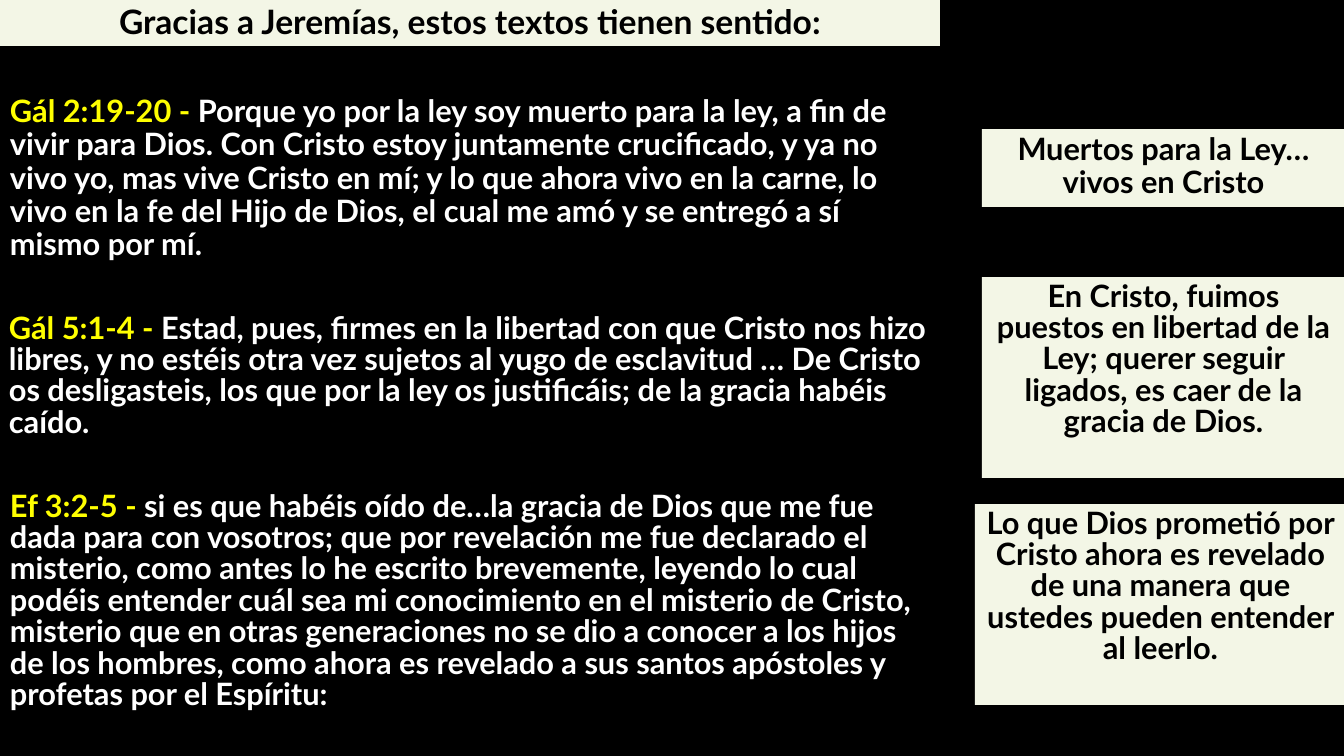
from dataclasses import dataclass

from pptx import Presentation
from pptx.dml.color import RGBColor
from pptx.enum.shapes import MSO_SHAPE
from pptx.enum.text import MSO_ANCHOR, PP_ALIGN
from pptx.util import Emu, Pt


@dataclass(frozen=True)
class Theme:
    font: str = "Lato"
    background: str = "000000"
    panel: str = "F3F6E6"
    dark: str = "000000"
    light: str = "FFFFFF"
    accent: str = "FFFF00"
    title: int = 24
    body: int = 22


class Deck:
    """Draws verses and panels on the current slide in one theme."""

    scale = 914400 / 100.8

    def __init__(self, prs, theme):
        self.theme = theme
        prs.slide_width, prs.slide_height = self.emu(1344, 756)
        self.s = prs.slides.add_slide(prs.slide_layouts[6])
        self.fill(self.s.background, theme.background)

    def emu(self, *lengths):
        return [Emu(round(n * self.scale)) for n in lengths]

    def fill(self, target, color):
        target.fill.solid()
        target.fill.fore_color.rgb = RGBColor.from_string(color)

    def set_text(self, sp, runs, size, spacing, align):
        tf = sp.text_frame
        tf.word_wrap = True
        tf.vertical_anchor = MSO_ANCHOR.TOP
        p = tf.paragraphs[0]
        p.alignment = align
        p.line_spacing = spacing
        p.font.name = self.theme.font
        p.font.size = Pt(size)
        p.font.bold = True
        for text, color in runs:
            r = p.add_run()
            r.text = text
            r.font.color.rgb = RGBColor.from_string(color)

    def panel(self, box, text, spacing, size=None):
        sp = self.s.shapes.add_shape(MSO_SHAPE.RECTANGLE, *self.emu(*box))
        sp.shadow.inherit = False
        self.fill(sp, self.theme.panel)
        sp.line.fill.background()
        self.set_text(sp, [(text, self.theme.dark)], size or self.theme.body,
                      spacing, PP_ALIGN.CENTER)

    def verse(self, box, reference, text, spacing):
        sp = self.s.shapes.add_textbox(*self.emu(*box))
        runs = [(reference + " - ", self.theme.accent), (text, self.theme.light)]
        self.set_text(sp, runs, self.theme.body, spacing, PP_ALIGN.LEFT)


PANELS = [
    ((982, 129, 363, 78), "Muertos para la Ley…vivos en Cristo", 0.9),
    ((982, 277, 363, 201),
     "En Cristo, fuimos puestos en libertad de la Ley; querer seguir ligados, "
     "es caer de la gracia de Dios.", 0.85),
    ((975, 504, 371, 201),
     "Lo que Dios prometió por Cristo ahora es revelado de una manera que "
     "ustedes pueden entender al leerlo.", 0.85),
]

VERSES = [
    ((0, 91, 940, 178), "Gál 2:19-20",
     "Porque yo por la ley soy muerto para la ley, a fin de vivir para Dios. "
     "Con Cristo estoy juntamente crucificado, y ya no vivo yo, mas vive "
     "Cristo en mí; y lo que ahora vivo en la carne, lo vivo en la fe del Hijo "
     "de Dios, el cual me amó y se entregó a sí mismo por mí.", 0.9),
    ((-1, 309, 953, 137), "Gál 5:1-4",
     "Estad, pues, firmes en la libertad con que Cristo nos hizo libres, y no "
     "estéis otra vez sujetos al yugo de esclavitud … De Cristo os "
     "desligasteis, los que por la ley os justificáis; de la gracia habéis "
     "caído.", 0.85),
    ((0, 487, 940, 264), "Ef 3:2-5",
     "si es que habéis oído de…la gracia de Dios que me fue dada para con "
     "vosotros; que por revelación me fue declarado el misterio, como antes lo "
     "he escrito brevemente, leyendo lo cual podéis entender cuál sea mi "
     "conocimiento en el misterio de Cristo, misterio que en otras "
     "generaciones no se dio a conocer a los hijos de los hombres, como ahora "
     "es revelado a sus santos apóstoles y profetas por el Espíritu:", 0.85),
]


def main():
    prs = Presentation()
    theme = Theme()
    deck = Deck(prs, theme)
    deck.panel((0, 0, 940, 46), "Gracias a Jeremías, estos textos tienen sentido:",
               0.9, theme.title)
    for panel in PANELS:
        deck.panel(*panel)
    for verse in VERSES:
        deck.verse(*verse)
    prs.save("out.pptx")


if __name__ == "__main__":
    main()
